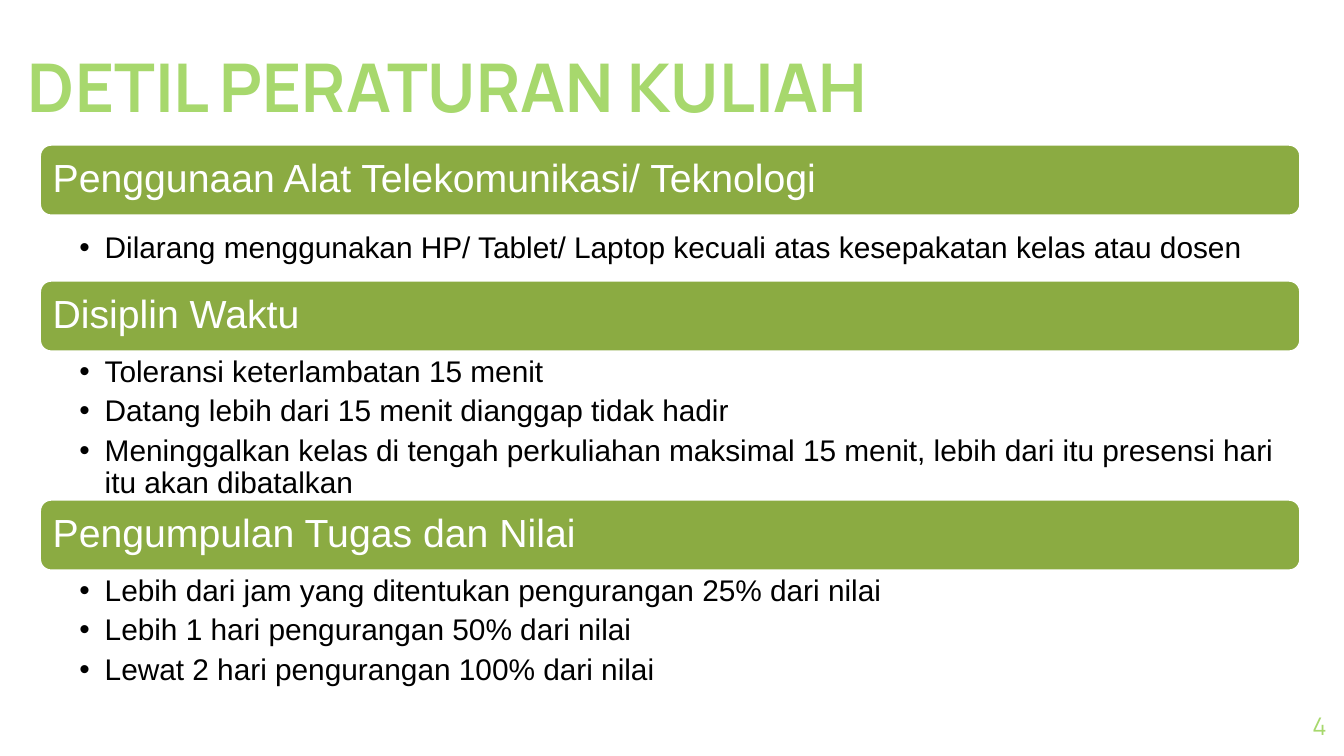
from lxml import etree
from pptx import Presentation
from pptx.dml.color import RGBColor
from pptx.enum.shapes import MSO_SHAPE
from pptx.enum.text import MSO_ANCHOR, PP_ALIGN
from pptx.oxml.ns import qn
from pptx.util import Cm, Pt

LIME = RGBColor(0xA7, 0xD8, 0x6D)
GREEN = RGBColor(0x8B, 0xAB, 0x42)
WHITE = RGBColor(0xFF, 0xFF, 0xFF)
BLACK = RGBColor(0x00, 0x00, 0x00)
ROUNDED = MSO_SHAPE.ROUNDED_RECTANGLE
TOP, MIDDLE, BOTTOM = MSO_ANCHOR.TOP, MSO_ANCHOR.MIDDLE, MSO_ANCHOR.BOTTOM
LEFT, RIGHT = PP_ALIGN.LEFT, PP_ALIGN.RIGHT

MARGIN, WIDTH = 0.74, 23.85
FIRST_TOP, HEADING_HEIGHT = 2.72, 1.37
SECTIONS = [
    ("Penggunaan Alat Telekomunikasi/ Teknologi", 0.23, 0.97, [
        "Dilarang menggunakan HP/ Tablet/ Laptop kecuali atas kesepakatan kelas atau dosen",
    ]),
    ("Disiplin Waktu", 0, 2.77, [
        "Toleransi keterlambatan 15 menit",
        "Datang lebih dari 15 menit dianggap tidak hadir",
        "Meninggalkan kelas di tengah perkuliahan maksimal 15 menit, "
        "lebih dari itu presensi hari itu akan dibatalkan",
    ]),
    ("Pengumpulan Tugas dan Nilai", 0, 2.18, [
        "Lebih dari jam yang ditentukan pengurangan 25% dari nilai",
        "Lebih 1 hari pengurangan 50% dari nilai",
        "Lewat 2 hari pengurangan 100% dari nilai",
    ]),
]


def add_bullet(p):
    """Give a paragraph a hanging round bullet."""
    pPr = p._p.get_or_add_pPr()
    pPr.set("marL", str(Cm(0.48)))
    pPr.set("indent", str(-Cm(0.48)))
    etree.SubElement(pPr, qn("a:buFont")).set("typeface", "Arial")
    etree.SubElement(pPr, qn("a:buChar")).set("char", "•")


def write_text(sp, lines, *, size, color, font="Arial", bold=False, align=LEFT,
               anchor=TOP, insets=(0, 0, 0, 0), spacing=None, after=0, bullets=False):
    """Fill a shape with one formatted paragraph per line."""
    tf = sp.text_frame
    tf.word_wrap = True
    tf.vertical_anchor = anchor
    tf.margin_left, tf.margin_top, tf.margin_right, tf.margin_bottom = map(Cm, insets)
    for i, line in enumerate(lines):
        p = tf.add_paragraph() if i else tf.paragraphs[0]
        p.alignment = align
        p.line_spacing = spacing
        p.space_after = Pt(after)
        if bullets:
            add_bullet(p)
        r = p.add_run()
        r.text = line
        r.font.name = font
        r.font.size = Pt(size)
        r.font.bold = bold
        r.font.color.rgb = color


def add_text(s, left, top, width, height, lines, **fmt):
    """Add a text box holding the given lines."""
    sp = s.shapes.add_textbox(Cm(left), Cm(top), Cm(width), Cm(height))
    write_text(sp, lines, **fmt)


def add_heading(s, top, text):
    """Add a rounded green bar with a section heading."""
    sp = s.shapes.add_shape(ROUNDED, Cm(MARGIN), Cm(top), Cm(WIDTH), Cm(HEADING_HEIGHT))
    sp.shadow.inherit = False
    sp.fill.solid()
    sp.fill.fore_color.rgb = GREEN
    sp.line.color.rgb = WHITE
    sp.line.width = Pt(2)
    write_text(sp, [text], size=21, color=WHITE, anchor=MIDDLE,
               insets=(0.19, 0.23, 0.19, 0.23), spacing=0.9)


def add_sections(s):
    """Stack each heading and its rules from top to bottom."""
    top = FIRST_TOP
    for heading, gap, height, rules in SECTIONS:
        add_heading(s, top, heading)
        top += HEADING_HEIGHT + gap
        add_text(s, MARGIN, top, WIDTH, height, rules, size=16, color=BLACK,
                 insets=(0.76, 0.08, 0.41, 0.08), spacing=0.9, after=4, bullets=True)
        top += height


def main():
    """Build the slide and save it."""
    prs = Presentation()
    prs.slide_width, prs.slide_height = Cm(25.4), Cm(14.29)
    s = prs.slides.add_slide(prs.slide_layouts[6])
    add_text(s, 0.53, 0, 17.5, 2.39, ["DETIL PERATURAN KULIAH"], size=36,
             color=LIME, font="Manrope", bold=True, anchor=BOTTOM)
    add_text(s, 23.55, 13.18, 1.52, 1.09, ["4"], size=13, color=LIME,
             font="Manrope", align=RIGHT, anchor=MIDDLE)
    add_sections(s)
    prs.save("out.pptx")


if __name__ == "__main__":
    main()
